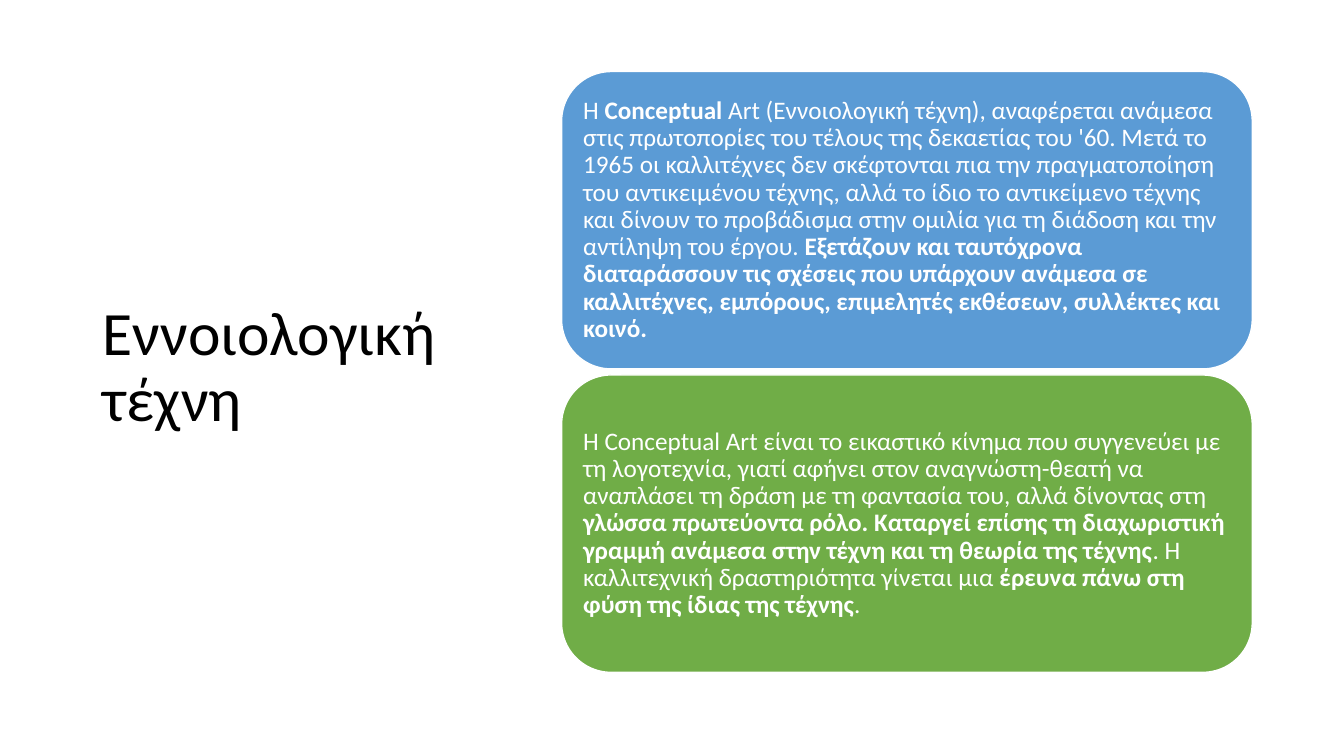
"""Build a slide on conceptual art with a title and two stacked text cards."""
from pptx import Presentation
from pptx.dml.color import RGBColor
from pptx.enum.shapes import MSO_SHAPE
from pptx.enum.text import MSO_ANCHOR, MSO_AUTO_SIZE, PP_ALIGN
from pptx.util import Inches, Pt


def rgb(value):
    return RGBColor.from_string(value)


def add_run(p, text, size, color, bold=False):
    r = p.add_run()
    r.text = text
    r.font.name = "Calibri"
    r.font.size = Pt(size)
    r.font.bold = bold
    r.font.color.rgb = rgb(color)


prs = Presentation()
prs.slide_width, prs.slide_height = Inches(13.33), Inches(7.5)
s = prs.slides.add_slide(prs.slide_layouts[5])

title = s.shapes.title
title.left, title.top = Inches(0.92), Inches(0.61)
title.width, title.height = Inches(3.69), Inches(6.09)
tf = title.text_frame
tf.word_wrap = True
tf.auto_size = MSO_AUTO_SIZE.NONE
tf.vertical_anchor = MSO_ANCHOR.MIDDLE
p = tf.paragraphs[0]
p.alignment = PP_ALIGN.LEFT
p.line_spacing = 0.9
add_run(p, "Εννοιολογική τέχνη", 44, "000000")

cards = [
    ("5B9BD5", [
        ("Η ", False),
        ("Conceptual ", True),
        ("Art (Εννοιολογική τέχνη), αναφέρεται ανάμεσα στις πρωτοπορίες του "
         "τέλους της δεκαετίας του '60. Μετά το 1965 οι καλλιτέχνες δεν "
         "σκέφτονται πια την πραγματοποίηση του αντικειμένου τέχνης, αλλά το "
         "ίδιο το αντικείμενο τέχνης και δίνουν το προβάδισμα στην ομιλία για "
         "τη διάδοση και την αντίληψη του έργου. ", False),
        ("Εξετάζουν και ταυτόχρονα διαταράσσουν τις σχέσεις που υπάρχουν "
         "ανάμεσα σε καλλιτέχνες, εμπόρους, επιμελητές εκθέσεων, συλλέκτες "
         "και κοινό.", True),
    ]),
    ("70AD47", [
        ("Η Conceptual Art είναι το εικαστικό κίνημα που συγγενεύει με τη "
         "λογοτεχνία, γιατί αφήνει στον αναγνώστη-θεατή να αναπλάσει τη δράση "
         "με τη φαντασία του, αλλά δίνοντας στη ", False),
        ("γλώσσα πρωτεύοντα ρόλο. Καταργεί επίσης τη διαχωριστική γραμμή "
         "ανάμεσα στην τέχνη και τη θεωρία της τέχνης", True),
        (". Η καλλιτεχνική δραστηριότητα γίνεται μια ", False),
        ("έρευνα πάνω στη φύση της ίδιας της τέχνης", True),
        (".", False),
    ]),
]

for i, (fill, runs) in enumerate(cards):
    sp = s.shapes.add_shape(MSO_SHAPE.ROUNDED_RECTANGLE, Inches(5.57),
                            Inches(0.71 + 3.01 * i), Inches(6.85), Inches(2.95))
    sp.shadow.inherit = False
    sp.fill.solid()
    sp.fill.fore_color.rgb = rgb(fill)
    sp.line.color.rgb = rgb("FFFFFF")
    sp.line.width = Pt(1)
    tf = sp.text_frame
    tf.word_wrap = True
    tf.vertical_anchor = MSO_ANCHOR.MIDDLE
    tf.margin_left = tf.margin_right = Inches(0.07)
    tf.margin_top = tf.margin_bottom = Inches(0.07)
    p = tf.paragraphs[0]
    p.alignment = PP_ALIGN.LEFT
    p.line_spacing = 0.9
    for text, bold in runs:
        add_run(p, text, 18, "FFFFFF", bold)

prs.save("out.pptx")
